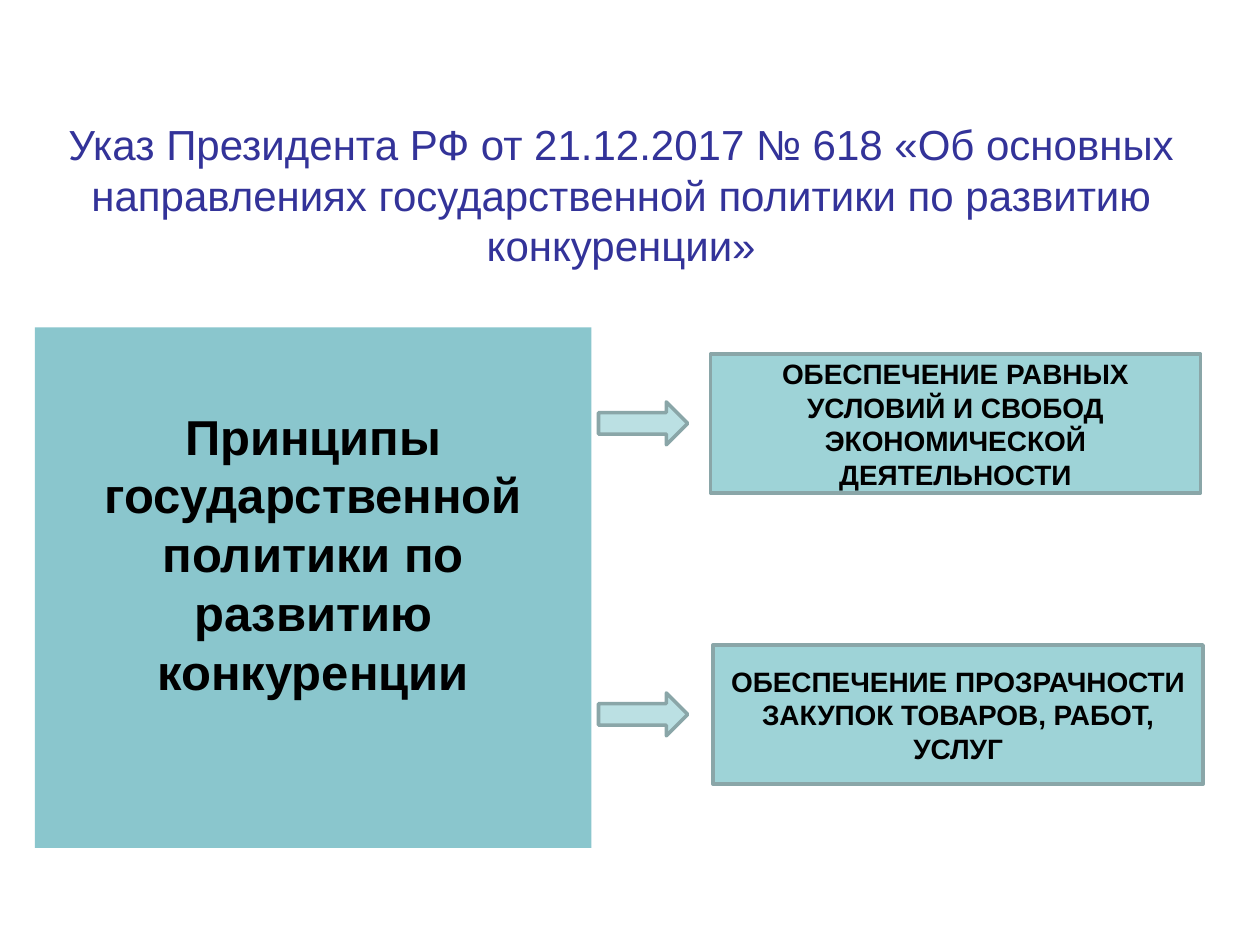
from pptx import Presentation
from pptx.dml.color import RGBColor
from pptx.enum.shapes import MSO_SHAPE
from pptx.enum.text import MSO_ANCHOR, PP_ALIGN
from pptx.util import Pt

RECTANGLE, ARROW = MSO_SHAPE.RECTANGLE, MSO_SHAPE.RIGHT_ARROW
TOP, MIDDLE = MSO_ANCHOR.TOP, MSO_ANCHOR.MIDDLE
CENTER = PP_ALIGN.CENTER
TITLE_ONLY = 5
BORDER = "8AA6A8"


def color(value):
    """Turn a hex string into a colour."""
    return RGBColor.from_string(value)


def write(shape, text, size, ink, bold=False, anchor=MIDDLE):
    """Put one centred, wrapped paragraph into a shape."""
    frame = shape.text_frame
    frame.word_wrap = True
    frame.vertical_anchor = anchor
    frame.text = text
    paragraph = frame.paragraphs[0]
    paragraph.alignment = CENTER
    font = paragraph.font
    font.name, font.size, font.bold = "Arial", Pt(size), bold
    font.color.rgb = color(ink)


def add_block(slide, kind, box, fill, border=None):
    """Draw a filled shape with an optional border."""
    block = slide.shapes.add_shape(kind, *map(Pt, box))
    block.shadow.inherit = False
    block.fill.solid()
    block.fill.fore_color.rgb = color(fill)
    if border:
        block.line.color.rgb = color(border)
        block.line.width = Pt(2)
    else:
        block.line.fill.background()
    return block


def add_title(slide, box, text):
    """Place and format the title placeholder."""
    title = slide.shapes.title
    title.left, title.top, title.width, title.height = map(Pt, box)
    write(title, text, 24, "333399")


def add_subject(slide, box, text):
    """Draw the large panel naming the subject."""
    panel = add_block(slide, RECTANGLE, box, "8AC6CD")
    write(panel, text, 28, "000000", True, TOP)
    panel.text_frame.margin_top = Pt(45)


def add_principle(slide, box, indent, text):
    """Draw an arrow at the left of the box and its principle at the right."""
    left, top, width, height = box
    principle_left = left + 64 + indent
    principle = add_block(slide, RECTANGLE, (principle_left, top, width - 64, height),
                          "9ED3D7", BORDER)
    write(principle, text, 16, "000000", True)
    add_block(slide, ARROW, (left, top + 27.4, 51, 24.5), "BBE0E3", BORDER)


def main():
    """Build and save the slide."""
    deck = Presentation()
    deck.slide_width, deck.slide_height = Pt(720), Pt(540)
    slide = deck.slides.add_slide(deck.slide_layouts[TITLE_ONLY])
    add_title(slide, (31, 66, 648, 90),
              "Указ Президента РФ от 21.12.2017 № 618 «Об основных направлениях "
              "государственной политики по развитию конкуренции»")
    add_subject(slide, (20, 187, 318, 297.5),
                "Принципы государственной политики по развитию конкуренции")
    principles = (
        (0, "ОБЕСПЕЧЕНИЕ РАВНЫХ УСЛОВИЙ И СВОБОД ЭКОНОМИЧЕСКОЙ ДЕЯТЕЛЬНОСТИ"),
        (1.5, "ОБЕСПЕЧЕНИЕ ПРОЗРАЧНОСТИ ЗАКУПОК ТОВАРОВ, РАБОТ, УСЛУГ"),
    )
    for row, (indent, text) in enumerate(principles):
        add_principle(slide, (342, 202.3 + row * 166.3, 344, 79.5), indent, text)
    deck.save("out.pptx")


if __name__ == "__main__":
    main()
